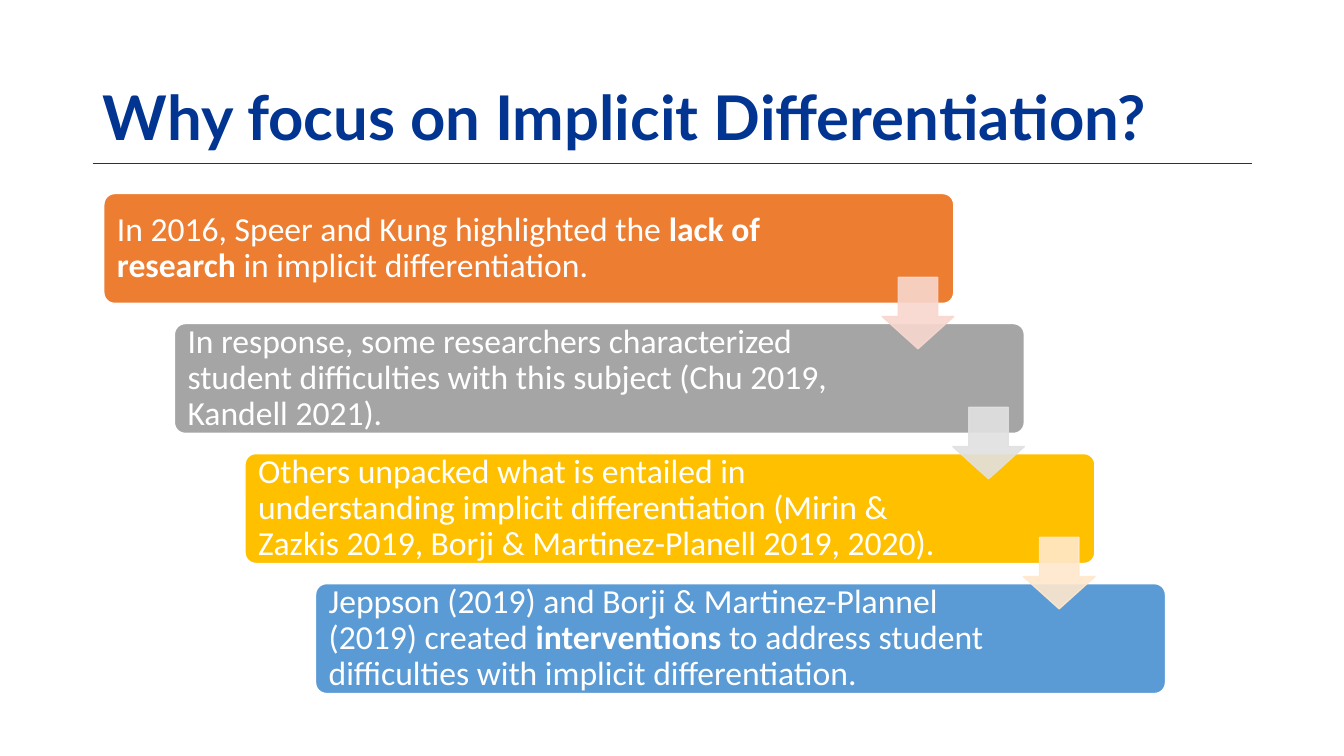
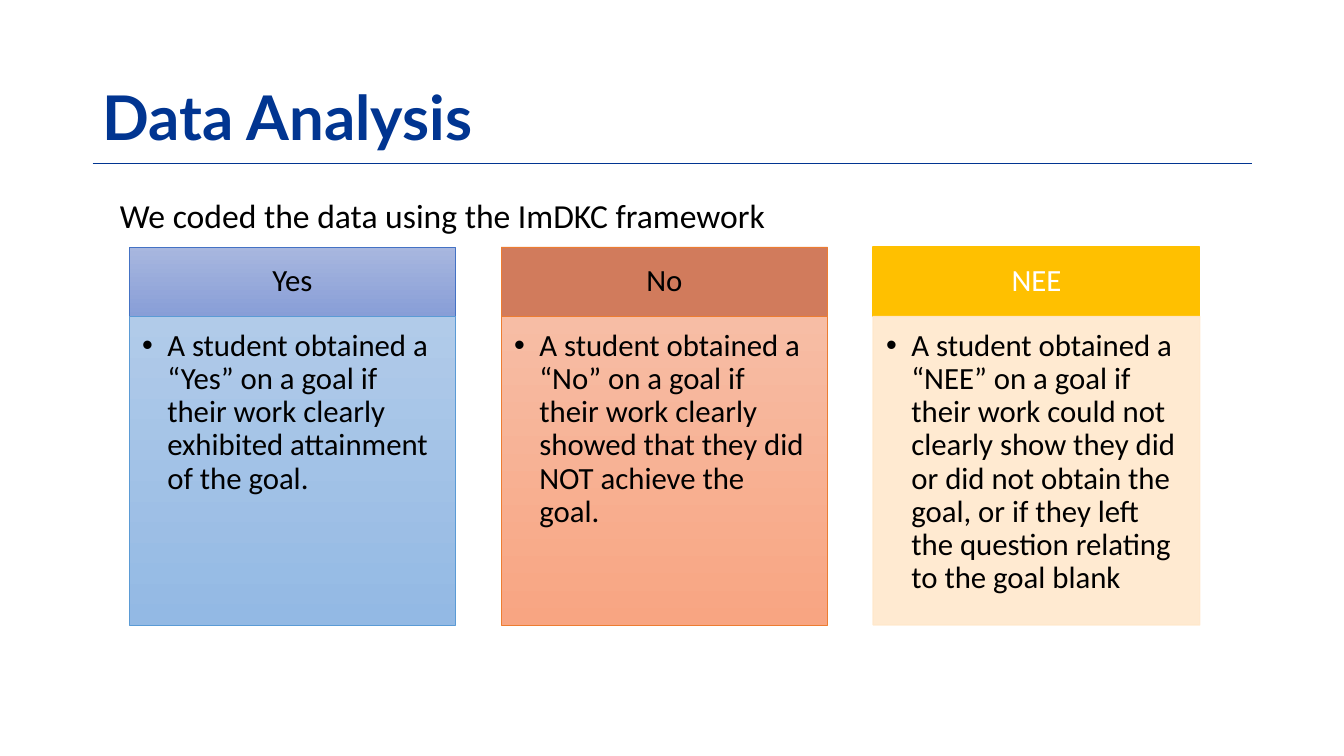
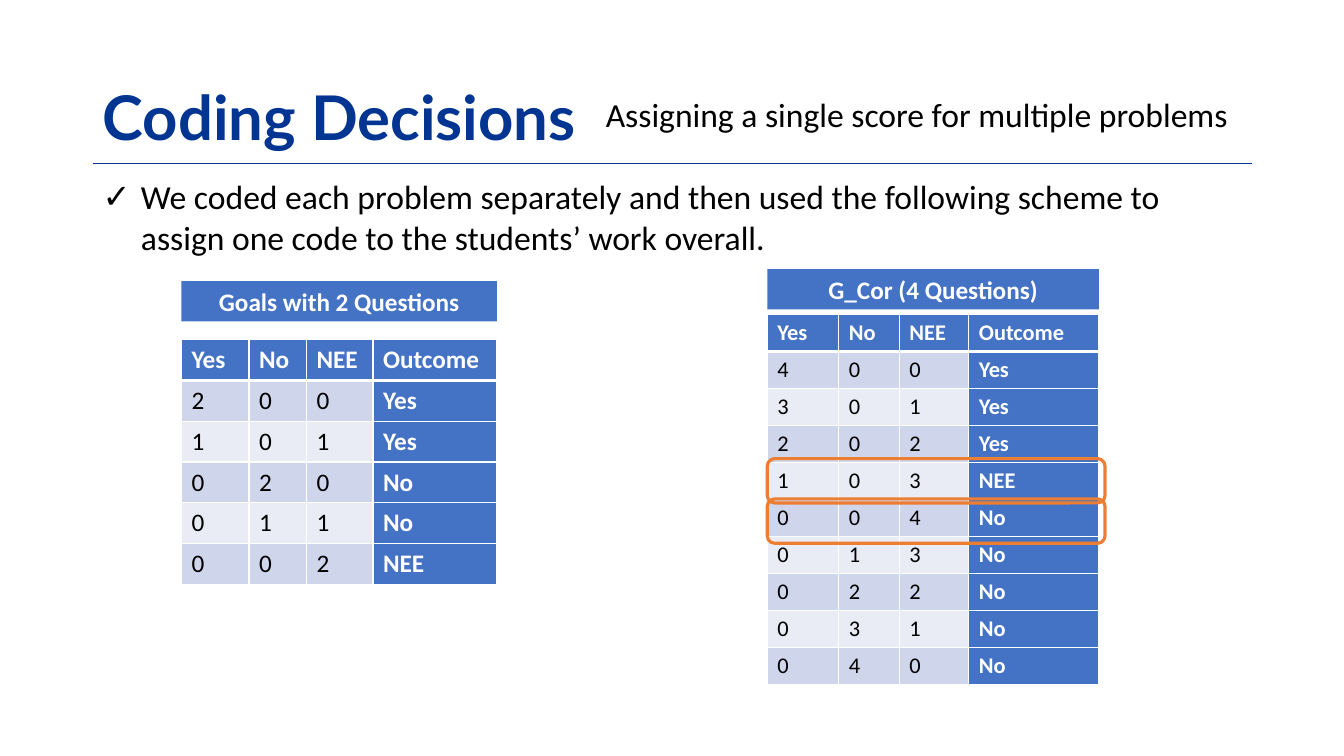
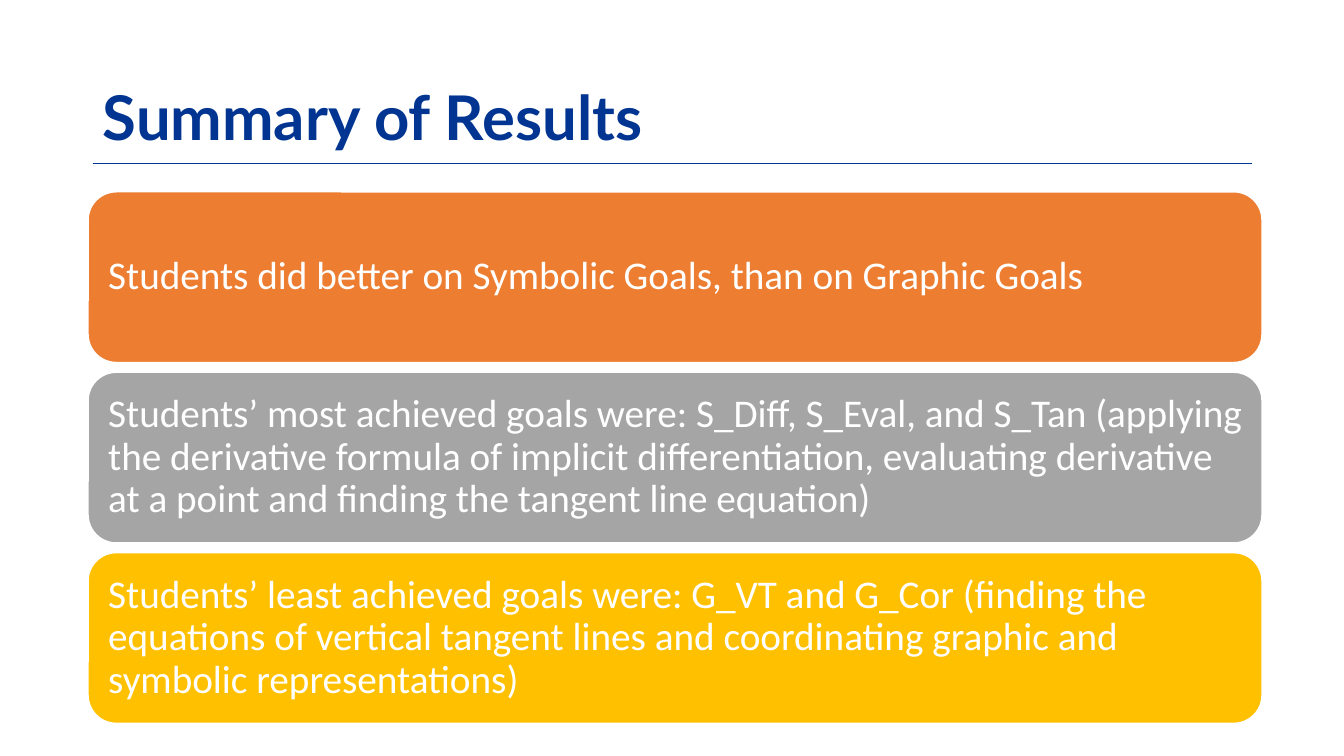
from lxml import etree
from pptx import Presentation
from pptx.dml.color import RGBColor
from pptx.enum import shapes, text
from pptx.oxml.ns import qn
from pptx.util import Inches, Pt

NAVY = RGBColor(0x01, 0x35, 0x91)
BLACK = RGBColor(0, 0, 0)
WHITE = RGBColor(0xFF, 0xFF, 0xFF)
ORANGE = RGBColor(0xED, 0x7D, 0x31)
GRAY = RGBColor(0xA5, 0xA5, 0xA5)
GOLD = RGBColor(0xFF, 0xC0, 0x00)
SKY = RGBColor(0x5B, 0x9B, 0xD5)
BLUE = RGBColor(0x44, 0x72, 0xC4)
RUST = RGBColor(0xD1, 0x7B, 0x5C)
PALE_ORANGE = RGBColor(0xF8, 0xD7, 0xCE)
PALE_GRAY = RGBColor(0xE1, 0xE1, 0xE1)
PALE_GOLD = RGBColor(0xFF, 0xE8, 0xCC)
BAND_DARK = RGBColor(0xCF, 0xD5, 0xEA)
BAND_LIGHT = RGBColor(0xE9, 0xEB, 0xF5)
BLUE_GRADIENT = (RGBColor(0xA8, 0xB7, 0xDF), RGBColor(0x88, 0x9E, 0xD7))
SKY_GRADIENT = (RGBColor(0xB1, 0xCB, 0xE9), RGBColor(0x93, 0xB9, 0xE4))
ORANGE_GRADIENT = (RGBColor(0xF7, 0xBD, 0xA5), RGBColor(0xF8, 0xA5, 0x82))

RECT = shapes.MSO_SHAPE.RECTANGLE
ROUND = shapes.MSO_SHAPE.ROUNDED_RECTANGLE
ARROW = shapes.MSO_SHAPE.DOWN_ARROW
LEFT, CENTER = text.PP_ALIGN.LEFT, text.PP_ALIGN.CENTER
TOP, MIDDLE = text.MSO_ANCHOR.TOP, text.MSO_ANCHOR.MIDDLE


def add_box(s, kind, at, fill=None, line=None, width=1, alpha=None):
    """Add a preset shape; a pair of colours as fill makes a downward gradient."""
    sp = s.shapes.add_shape(kind, *map(Inches, at))
    sp.shadow.inherit = False
    if fill is None:
        sp.fill.background()
    elif isinstance(fill, RGBColor):
        sp.fill.solid()
        sp.fill.fore_color.rgb = fill
    else:
        sp.fill.gradient()
        sp.fill.gradient_angle = 270
        for stop, color in zip(sp.fill.gradient_stops, fill):
            stop.color.rgb = color
    if line is None:
        sp.line.fill.background()
    else:
        sp.line.color.rgb = line
        sp.line.width = Pt(width)
    if alpha:
        for color in sp._element.spPr.iter(qn("a:srgbClr")):
            etree.SubElement(color, qn("a:alpha"), val=str(alpha * 1000))
    return sp


def write(sp, words, size, color, insets=(0.1, 0.05, 0.1, 0.05), anchor=MIDDLE,
          align=LEFT, spacing=0.9, bullet=None, indent=0, bold=False):
    """Fill a shape with one paragraph; parts between asterisks are bold."""
    tf = sp.text_frame
    tf.word_wrap = True
    tf.vertical_anchor = anchor
    tf.margin_left, tf.margin_top, tf.margin_right, tf.margin_bottom = map(Inches, insets)
    p = tf.paragraphs[0]
    if bullet:
        pPr = p._p.get_or_add_pPr()
        pPr.set("marL", str(Inches(indent)))
        pPr.set("indent", str(-Inches(indent)))
        etree.SubElement(pPr, qn("a:buFont"), typeface="Arial")
        etree.SubElement(pPr, qn("a:buChar"), char=bullet)
    p.alignment = align
    p.line_spacing = spacing
    for i, part in enumerate(words.split("*")):
        r = p.add_run()
        r.text = part
        r.font.name = "Calibri"
        r.font.size = Pt(size)
        r.font.bold = bold or i % 2 == 1
        r.font.color.rgb = color


prs = Presentation()
prs.slide_width, prs.slide_height = Inches(13.33), Inches(7.5)

# Titles and the rule under them
slides = []
for title in ("Why focus on Implicit Differentiation?", "Data Analysis",
              "Coding Decisions", "Summary of Results"):
    s = prs.slides.add_slide(prs.slide_layouts[5])
    rule = s.shapes.add_connector(shapes.MSO_CONNECTOR.STRAIGHT, Inches(0.92),
                                  Inches(1.62), Inches(12.42), Inches(1.62))
    rule.line.color.rgb = NAVY
    rule.line.width = Pt(1)
    etree.SubElement(rule._element.spPr, qn("a:effectLst"))
    sp = s.shapes.title
    sp.left, sp.top, sp.width, sp.height = map(Inches, (0.92, 0.62, 11.5, 0.96))
    tf = sp.text_frame
    tf.text = title
    tf.auto_size = text.MSO_AUTO_SIZE.NONE
    tf.vertical_anchor = text.MSO_ANCHOR.BOTTOM
    p = tf.paragraphs[0]
    p.alignment = LEFT
    p.line_spacing = 0.9
    font = p.runs[0].font
    font.name, font.size, font.bold = "Lato", Pt(44), True
    font.color.rgb = NAVY
    slides.append(s)
why, analysis, decisions, summary = slides

# Slide 1: staircase of steps joined by arrows
steps = [
    (ORANGE, "In 2016, Speer and Kung highlighted the *lack of research *"
     "in implicit differentiation."),
    (GRAY, "In response, some researchers characterized student difficulties "
     "with this subject (Chu 2019, Kandell 2021)."),
    (GOLD, "Others unpacked what is entailed in understanding implicit "
     "differentiation (Mirin & Zazkis 2019, Borji & Martinez-Planell 2019, 2020)."),
    (SKY, "Jeppson (2019) and Borji & Martinez-Plannel (2019) created "
     "*interventions* to address student difficulties with implicit differentiation."),
]
STEP_X, STEP_Y = 0.7, 1.29
for i, (color, words) in enumerate(steps):
    sp = add_box(why, ROUND, (1.03 + i * STEP_X, 1.92 + i * STEP_Y, 8.43, 1.09), color, WHITE)
    sp.adjustments[0] = 0.1
    # The wide right inset keeps the text clear of the arrows
    write(sp, words, 24, WHITE, (0.1, 0, 1.5, 0))
for i, color in enumerate((PALE_ORANGE, PALE_GRAY, PALE_GOLD)):
    sp = add_box(why, ARROW, (8.75 + i * STEP_X, 2.75 + i * STEP_Y, 0.71, 0.71),
                 color, color, alpha=90)
    sp.adjustments[0], sp.adjustments[1] = 0.55, 0.45

# Slide 2: one column per code
sp = analysis.shapes.add_textbox(Inches(1.09), Inches(1.88), Inches(11.5), Inches(0.5))
write(sp, "We coded the data using the ImDKC framework", 24, BLACK, anchor=TOP, spacing=1)
codes = [
    ("Yes", BLACK, BLUE_GRADIENT, BLUE, SKY_GRADIENT, SKY, 0.5, None,
     "A student obtained a “Yes” on a goal if their work clearly exhibited "
     "attainment of the goal."),
    ("No", BLACK, RUST, ORANGE, ORANGE_GRADIENT, ORANGE, 0.5, None,
     "A student obtained a “No” on a goal if their work clearly showed that they "
     "did NOT achieve the goal."),
    ("NEE", WHITE, GOLD, GOLD, PALE_GOLD, PALE_GOLD, 1, 90,
     "A student obtained a “NEE” on a goal if their work could not clearly show they "
     "did or did not obtain the goal, or if they left the question relating to the "
     "goal blank"),
]
for i, (code, color, head, head_line, body, body_line, width, alpha, words) in enumerate(codes):
    x = 1.28 + i * 3.69
    sp = add_box(analysis, RECT, (x, 2.45, 3.24, 0.69), head, head_line, width)
    write(sp, code, 22, color, (0.17, 0.1, 0.17, 0.1), align=CENTER)
    sp = add_box(analysis, RECT, (x, 3.14, 3.24, 3.06), body, body_line, width, alpha)
    write(sp, words, 22, BLACK, (0.13, 0.13, 0.17, 0.19), TOP, bullet="•", indent=0.25)

# Slide 3: scoring tables
sp = decisions.shapes.add_textbox(Inches(5.91), Inches(0.88), Inches(6.81), Inches(0.5))
write(sp, "Assigning a single score for multiple problems", 24, BLACK, anchor=TOP, spacing=1)
sp = decisions.shapes.add_textbox(Inches(0.92), Inches(1.7), Inches(11.5), Inches(0.91))
write(sp, "We coded each problem separately and then used the following scheme to assign "
      "one code to the students’ work overall.", 24, BLACK, anchor=TOP, spacing=1,
      bullet="✓", indent=0.38)

HEADER = ("Yes", "No", "NEE", "Outcome")
schemes = [
    ("Goals with 2 Questions", 1.8, 2.79, 3.37, (0.67, 0.57, 0.66, 1.23), 2.43, 18,
     ["2 0 0 Yes", "1 0 1 Yes", "0 2 0 No", "0 1 1 No", "0 0 2 NEE"]),
    ("G_Cor (4 Questions)", 7.61, 2.67, 3.12, (0.71, 0.6, 0.69, 1.29), 3.67, 16,
     ["4 0 0 Yes", "3 0 1 Yes", "2 0 2 Yes", "1 0 3 NEE", "0 0 4 No",
      "0 1 3 No", "0 2 2 No", "0 3 1 No", "0 4 0 No"]),
]
for caption, x, caption_y, y, widths, height, size, outcomes in schemes:
    rows = [HEADER] + [line.split() for line in outcomes]
    table = decisions.shapes.add_table(len(rows), len(HEADER), Inches(x), Inches(y),
                                       Inches(sum(widths)), Inches(height)).table
    for column, width in zip(table.columns, widths):
        column.width = Inches(width)
    for i, row in enumerate(rows):
        table.rows[i].height = Inches(height / len(rows))
        for j, value in enumerate(row):
            cell = table.cell(i, j)
            strong = i == 0 or j == 3
            cell.text = value
            font = cell.text_frame.paragraphs[0].runs[0].font
            font.name, font.size, font.bold = "Calibri", Pt(size), strong
            font.color.rgb = WHITE if strong else BLACK
            tcPr = cell._tc.get_or_add_tcPr()
            for side in "LRTB":
                thick = (side == "B" and i == 0) or (side == "T" and i == 1)
                ln = etree.SubElement(tcPr, qn("a:ln" + side), w=str(Pt(3 if thick else 1)))
                solid = etree.SubElement(ln, qn("a:solidFill"))
                etree.SubElement(solid, qn("a:srgbClr"), val=str(WHITE))
            cell.fill.solid()
            cell.fill.fore_color.rgb = BLUE if strong else BAND_DARK if i % 2 else BAND_LIGHT
    sp = add_box(decisions, RECT, (x, caption_y, sum(widths), 0.4), BLUE)
    write(sp, caption, 18, WHITE, align=CENTER, spacing=1, bold=True)
for y in (4.55, 4.95):
    add_box(decisions, ROUND, (7.61, y, 3.35, 0.44), line=ORANGE, width=2.25)

# Slide 4: stacked findings
findings = [
    (ORANGE, "Students did better on Symbolic Goals, than on Graphic Goals"),
    (GRAY, "Students’ most achieved goals were: S_Diff, S_Eval, and S_Tan (applying the "
     "derivative formula of implicit differentiation, evaluating derivative at a point "
     "and finding the tangent line equation)"),
    (GOLD, "Students’ least achieved goals were: G_VT and G_Cor (finding the equations of "
     "vertical tangent lines and coordinating graphic and symbolic representations)"),
]
for i, (color, words) in enumerate(findings):
    sp = add_box(summary, ROUND, (0.87, 1.9 + i * 1.79, 11.65, 1.7), color, WHITE, 1.5)
    write(sp, words, 28, WHITE, (0.12, 0.12, 0.12, 0.12))

prs.save("out.pptx")
